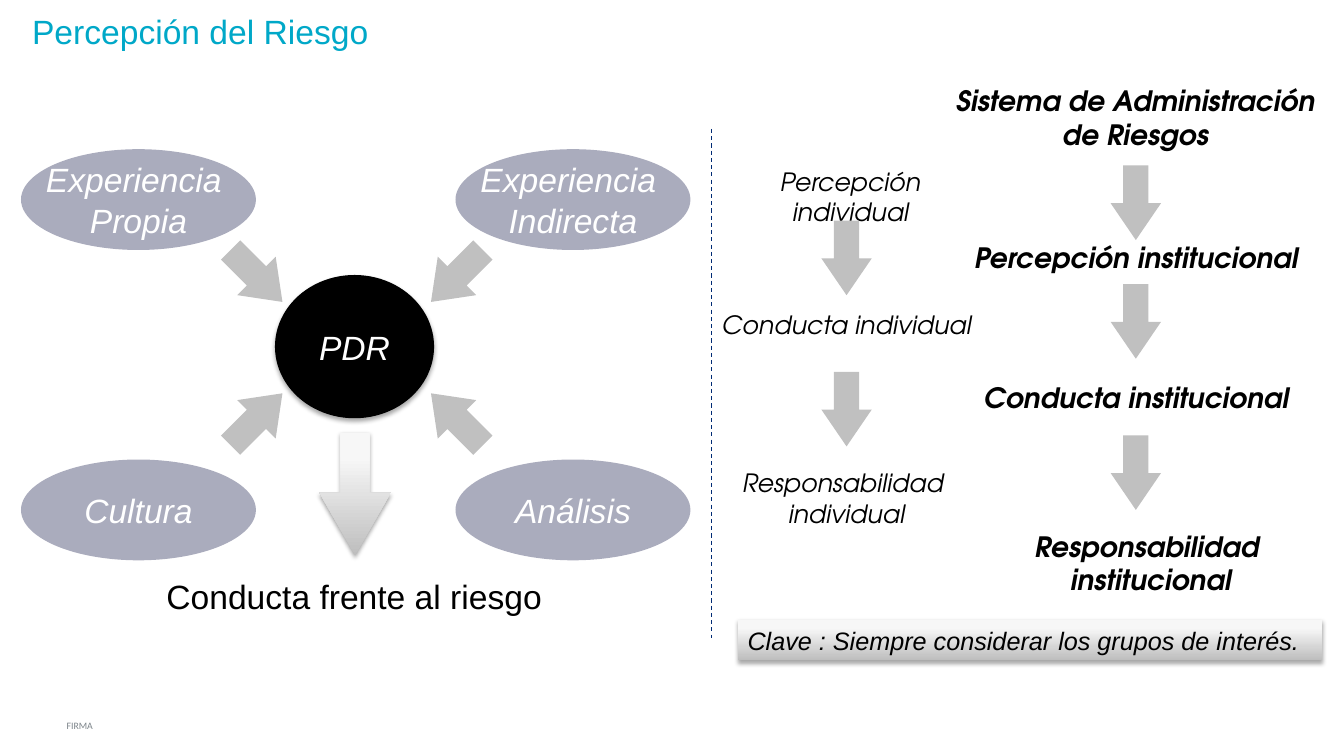
from copy import deepcopy
from dataclasses import dataclass

from pptx import Presentation
from pptx import util as u
from pptx.dml.color import RGBColor
from pptx.enum import dml, shapes, text
from pptx.oxml import parse_xml
from pptx.oxml.ns import nsdecls, qn

COLORS = {
    "title": "00A8C8",
    "black": "000000",
    "white": "FFFFFF",
    "factor": "AAACBD",
    "arrow": "C0C0C0",
    "divider": "002B74",
    "footer": "7C848A",
}
GRADIENT = [(0, "BEBEBE"), (0.8, "F7F7F7"), (1, "F8F8F8")]
ADVENTOR = "TeX Gyre Adventor"
SHAPE = shapes.MSO_SHAPE
CENTER = text.PP_ALIGN.CENTER


@dataclass
class Box:
    """Position and size in centimetres."""
    left: float
    top: float
    width: float
    height: float

    def lengths(self) -> list:
        return [u.Cm(n) for n in (self.left, self.top, self.width, self.height)]


@dataclass
class Step:
    words: str
    box: Box


@dataclass
class Chain:
    size: int
    bold: bool
    steps: list
    arrow_left: float
    arrow_tops: list


def write(frame, words: str, *, size: float, color: str = "black", font: str = "Arial",
          bold: bool = False, italic: bool = False, align=None, anchor=None,
          wrap: bool = True, grow: bool = False, spacing: float = None) -> None:
    frame.word_wrap = wrap
    if grow:
        frame.auto_size = text.MSO_AUTO_SIZE.SHAPE_TO_FIT_TEXT
    if anchor is not None:
        frame.vertical_anchor = anchor
    for number, line in enumerate(words.split("\n")):
        paragraph = frame.paragraphs[0] if number == 0 else frame.add_paragraph()
        paragraph.alignment = align or text.PP_ALIGN.LEFT
        if spacing:
            paragraph.line_spacing = spacing
        run = paragraph.add_run()
        run.text = line
        run.font.name, run.font.size = font, u.Pt(size)
        run.font.bold, run.font.italic = bold, italic
        run.font.color.rgb = RGBColor.from_string(COLORS[color])


def add_label(slide, words: str, box: Box, **style):
    label = slide.shapes.add_textbox(*box.lengths())
    write(label.text_frame, words, **style)
    return label


def add_figure(slide, kind, box: Box, color: str = None, adjust: tuple = (), rotation: float = 0):
    figure = slide.shapes.add_shape(kind, *box.lengths())
    figure.shadow.inherit = False
    figure.line.fill.background()
    figure.rotation = rotation
    for number, value in enumerate(adjust):
        figure.adjustments[number] = value
    if color:
        figure.fill.solid()
        figure.fill.fore_color.rgb = RGBColor.from_string(COLORS[color])
    else:
        fill_gradient(figure)
    return figure


def fill_gradient(figure) -> None:
    figure.fill.gradient()
    figure.fill.gradient_angle = 90
    stop_list = next(figure._element.spPr.iter(qn("a:gsLst")))
    stop_list.append(deepcopy(stop_list[-1]))
    for stop, (position, color) in zip(figure.fill.gradient_stops, GRADIENT):
        stop.position = position
        stop.color.rgb = RGBColor.from_string(color)


def cast_shadow(figure) -> None:
    effects = figure._element.spPr.find(qn("a:effectLst"))
    effects.append(parse_xml(
        f'<a:outerShdw {nsdecls("a")} blurRad="40000" dist="23000" dir="5400000" rotWithShape="0">'
        '<a:srgbClr val="000000"><a:alpha val="35000"/></a:srgbClr></a:outerShdw>'))


def draw_risk_perception(slide) -> None:
    # Centre of the diagram
    pdr = add_figure(slide, SHAPE.OVAL, Box(6.93, 6.93, 4.01, 3.61), "black")
    cast_shadow(pdr)
    in_oval = dict(size=24, color="white", italic=True, align=CENTER,
                   anchor=text.MSO_ANCHOR.MIDDLE, wrap=False)
    write(pdr.text_frame, "PDR", **in_oval)

    # Four factors, each with an arrow towards the centre
    factors = [
        ("Experiencia \nPropia", 0, 0, 45),
        ("Experiencia \nIndirecta", 1, 0, 135),
        ("Cultura", 0, 1, 315),
        ("Análisis", 1, 1, 225),
    ]
    for words, column, row, rotation in factors:
        oval = Box(0.53 + column * 10.95, 3.76 + row * 7.82, 5.92, 2.54)
        factor = add_figure(slide, SHAPE.OVAL, oval, "factor")
        write(factor.text_frame, words, **in_oval)
        arrow = Box(5.54 + column * 5.05, 6.27 + row * 3.61, 1.85, 1.37)
        add_figure(slide, SHAPE.RIGHT_ARROW, arrow, "arrow", (0.5, 0.676), rotation)

    # Outcome
    outcome_arrow = add_figure(slide, SHAPE.DOWN_ARROW, Box(8.05, 10.9, 1.8, 3.1),
                               adjust=(0.41, 0.88))
    cast_shadow(outcome_arrow)
    add_label(slide, "Conducta frente al riesgo", Box(2.03, 14.38, 13.79, 1.3),
              size=24, align=CENTER, grow=True)


def draw_chain(slide, chain: Chain) -> None:
    for step in chain.steps:
        add_label(slide, step.words, step.box, size=chain.size, bold=chain.bold,
                  italic=True, font=ADVENTOR, align=CENTER, grow=True)
    for top in chain.arrow_tops:
        add_figure(slide, SHAPE.DOWN_ARROW, Box(chain.arrow_left, top, 1.27, 1.88),
                   "arrow", (0.5, 0.731))


def draw_divider(slide) -> None:
    divider = slide.shapes.add_connector(shapes.MSO_CONNECTOR.STRAIGHT, u.Cm(17.93), u.Cm(3.25),
                                         u.Cm(17.93), u.Cm(16.08))
    divider.line.color.rgb = RGBColor.from_string(COLORS["divider"])
    divider.line.width = u.Pt(0.75)
    divider.line.dash_style = dml.MSO_LINE.DASH
    divider._element.spPr.append(parse_xml(f'<a:effectLst {nsdecls("a")}/>'))


INDIVIDUAL = Chain(18, False, [
    Step("Percepción individual", Box(17.93, 4.06, 7.01, 1.02)),
    Step("Conducta individual", Box(17.73, 7.67, 7.21, 0.91)),
    Step("Responsabilidad \nindividual", Box(17.73, 11.66, 7.21, 1.57)),
], 20.7, [5.56, 9.37])

INSTITUTIONAL = Chain(20, True, [
    Step("Sistema de Administración de Riesgos", Box(23.44, 1.98, 10.36, 1.73)),
    Step("Percepción institucional", Box(23.98, 5.94, 9.32, 0.99)),
    Step("Conducta institucional", Box(24.21, 9.47, 8.86, 0.99)),
    Step("Responsabilidad \ninstitucional", Box(24.94, 13.21, 8.13, 1.96)),
], 27.99, [4.17, 7.16, 10.97])


def main() -> None:
    deck = Presentation()
    deck.slide_width, deck.slide_height = u.Cm(33.87), u.Cm(19.05)
    slide = deck.slides.add_slide(deck.slide_layouts[6])

    # Footer and title
    footer = add_label(slide, "FIRMA", Box(1.68, 18.16, 10.19, 0.28), size=7, color="footer",
                       font="Calibri", anchor=text.MSO_ANCHOR.BOTTOM, wrap=False)
    frame = footer.text_frame
    frame.margin_left = frame.margin_top = frame.margin_right = frame.margin_bottom = 0
    add_label(slide, "Percepción del Riesgo", Box(0.56, 0.33, 31.98, 1.12),
              size=24, color="title", spacing=0.83, grow=True)

    # Left diagram, divider and the two chains
    draw_risk_perception(slide)
    draw_divider(slide)
    for chain in (INDIVIDUAL, INSTITUTIONAL):
        draw_chain(slide, chain)

    # Key message
    key = add_figure(slide, SHAPE.RECTANGLE, Box(18.59, 15.62, 14.73, 1.02))
    cast_shadow(key)
    write(key.text_frame, "Clave : Siempre considerar los grupos de interés.",
          size=18, italic=True, anchor=text.MSO_ANCHOR.TOP, grow=True)

    deck.save("out.pptx")


if __name__ == "__main__":
    main()
